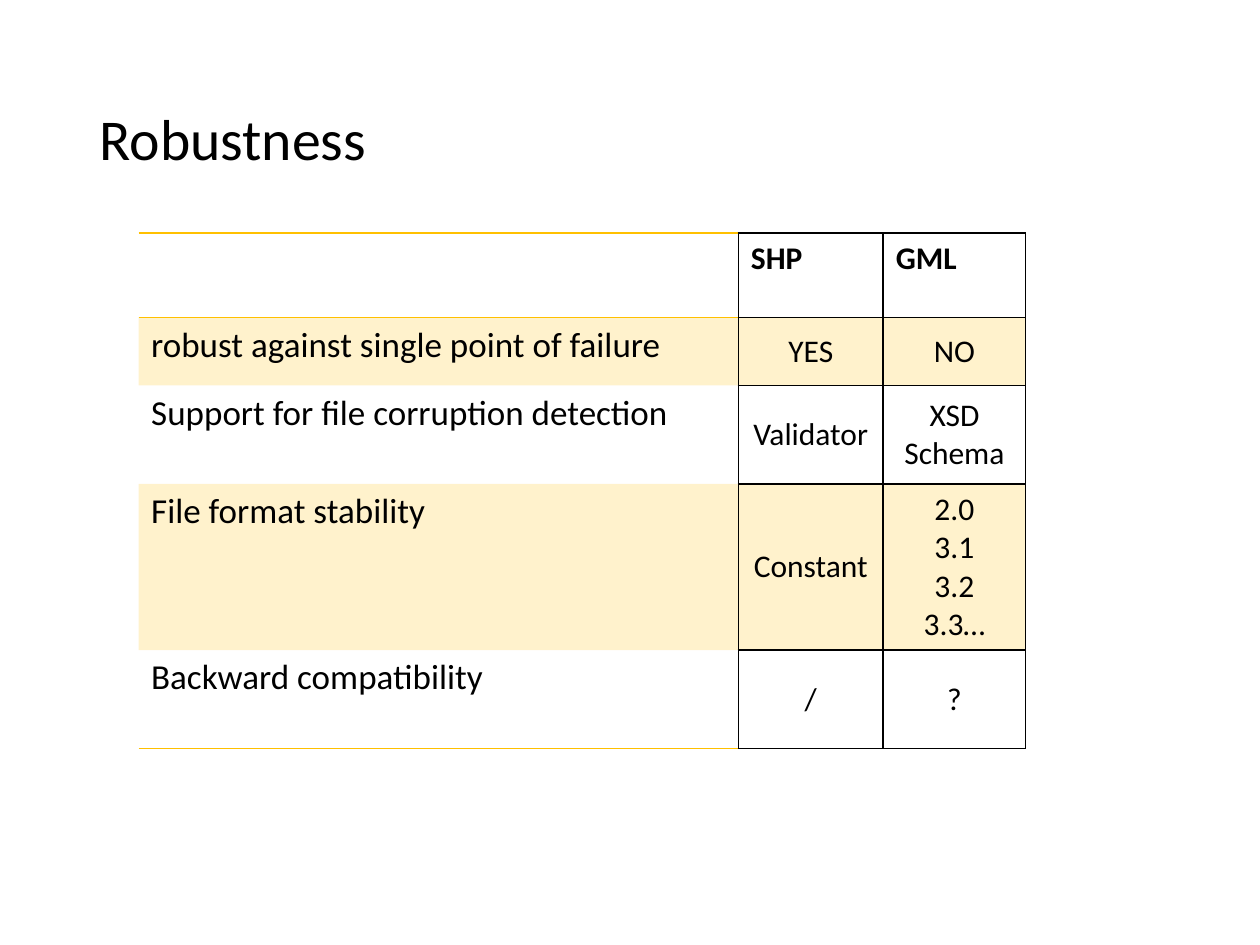
"""Build the Robustness slide comparing the SHP and GML formats."""
from typing import NamedTuple

from lxml.etree import SubElement
from pptx import Presentation
from pptx.dml.color import RGBColor
from pptx.enum.text import MSO_ANCHOR as Anchor, MSO_AUTO_SIZE as AutoSize, PP_ALIGN as Align
from pptx.oxml.ns import qn
from pptx.util import Inches, Pt

FONT = "Calibri"
BLACK = "000000"
AMBER = "FFC000"
COLUMN_WIDTHS = (4.76, 1.15, 1.13, 1.12, 1.27)
FORMAT_COLUMNS = (1, 2)


class Row(NamedTuple):
    height: float
    criterion: str
    shp: str
    gml: tuple[str, ...]


ROWS = (
    Row(0.67, "", "SHP", ("GML",)),
    Row(0.54, "robust against single point of failure", "YES", ("NO",)),
    Row(0.78, "Support for file corruption detection", "Validator", ("XSD Schema",)),
    Row(1.32, "File format stability", "Constant", ("2.0", "3.1", "3.2", "3.3…")),
    Row(0.78, "Backward compatibility", "/", ("?",)),
)


def colour(value: str) -> RGBColor:
    return RGBColor.from_string(value)


def add_span(para, text: str, size: float, bold: bool = False) -> None:
    span = para.add_run()
    span.text = text
    span.font.name = FONT
    span.font.size = Pt(size)
    span.font.bold = bold
    span.font.color.rgb = colour(BLACK)


def add_title(page, text: str) -> None:
    box = page.shapes.title
    box.left, box.top = Inches(0.69), Inches(0.4)
    box.width, box.height = Inches(8.62), Inches(1.45)
    frame = box.text_frame
    frame.word_wrap = True
    frame.auto_size = AutoSize.NONE
    frame.vertical_anchor = Anchor.MIDDLE
    para = frame.paragraphs[0]
    para.alignment = Align.LEFT
    para.line_spacing = 0.9
    add_span(para, text, 33)


def edge_colours(row: int, column: int) -> dict[str, str | None]:
    """Return the colour of each cell edge, with None for no line."""
    if column in FORMAT_COLUMNS:
        return dict.fromkeys("LRTB", BLACK)
    last = len(ROWS) - 1
    label = column == 0
    return {
        "L": BLACK if column - 1 in FORMAT_COLUMNS else None,
        "R": BLACK if label else None,
        "T": AMBER if label and row in (0, 1) else None,
        "B": AMBER if label and row in (0, last) else None,
    }


def draw_edges(cell, edges: dict[str, str | None]) -> None:
    properties = cell._tc.get_or_add_tcPr()
    for side, value in edges.items():
        line = SubElement(properties, qn(f"a:ln{side}"), w=str(Pt(1)))
        if value is None:
            SubElement(line, qn("a:noFill"))
        else:
            fill = SubElement(line, qn("a:solidFill"))
            SubElement(fill, qn("a:srgbClr"), val=value)


def fill_cell(cell, shaded: bool) -> None:
    if not shaded:
        cell.fill.background()
        return
    cell.fill.solid()
    cell.fill.fore_color.rgb = colour(AMBER)
    tint = cell._tc.tcPr.find(qn("a:solidFill")).find(qn("a:srgbClr"))
    SubElement(tint, qn("a:alpha"), val="20000")


def write_cell(cell, lines: tuple[str, ...], row: int, column: int) -> None:
    header = row == 0
    centred = not header and column in FORMAT_COLUMNS
    cell.vertical_anchor = Anchor.MIDDLE if centred else Anchor.TOP
    frame = cell.text_frame
    for index, text in enumerate(lines):
        para = frame.add_paragraph() if index else frame.paragraphs[0]
        para.alignment = Align.CENTER if centred else Align.LEFT
        if text:
            add_span(para, text, 18 if column in FORMAT_COLUMNS else 20, header)


def add_comparison(page) -> None:
    width, height = sum(COLUMN_WIDTHS), sum(row.height for row in ROWS)
    table = page.shapes.add_table(
        len(ROWS), len(COLUMN_WIDTHS), Inches(1.1), Inches(1.85), Inches(width), Inches(height)
    ).table
    table.first_row = table.horz_banding = False
    for column, column_width in zip(table.columns, COLUMN_WIDTHS):
        column.width = Inches(column_width)
    for y, row in enumerate(ROWS):
        table.rows[y].height = Inches(row.height)
        contents = ((row.criterion,), (row.shp,), row.gml, (), ())
        for x, lines in enumerate(contents):
            cell = table.cell(y, x)
            draw_edges(cell, edge_colours(y, x))
            fill_cell(cell, y % 2 == 1 and x <= max(FORMAT_COLUMNS))
            write_cell(cell, lines, y, x)


def main() -> None:
    deck = Presentation()
    deck.slide_width, deck.slide_height = Inches(10), Inches(7.5)
    page = deck.slides.add_slide(deck.slide_layouts.get_by_name("Title Only"))
    add_title(page, "Robustness")
    add_comparison(page)
    deck.save("out.pptx")


if __name__ == "__main__":
    main()
